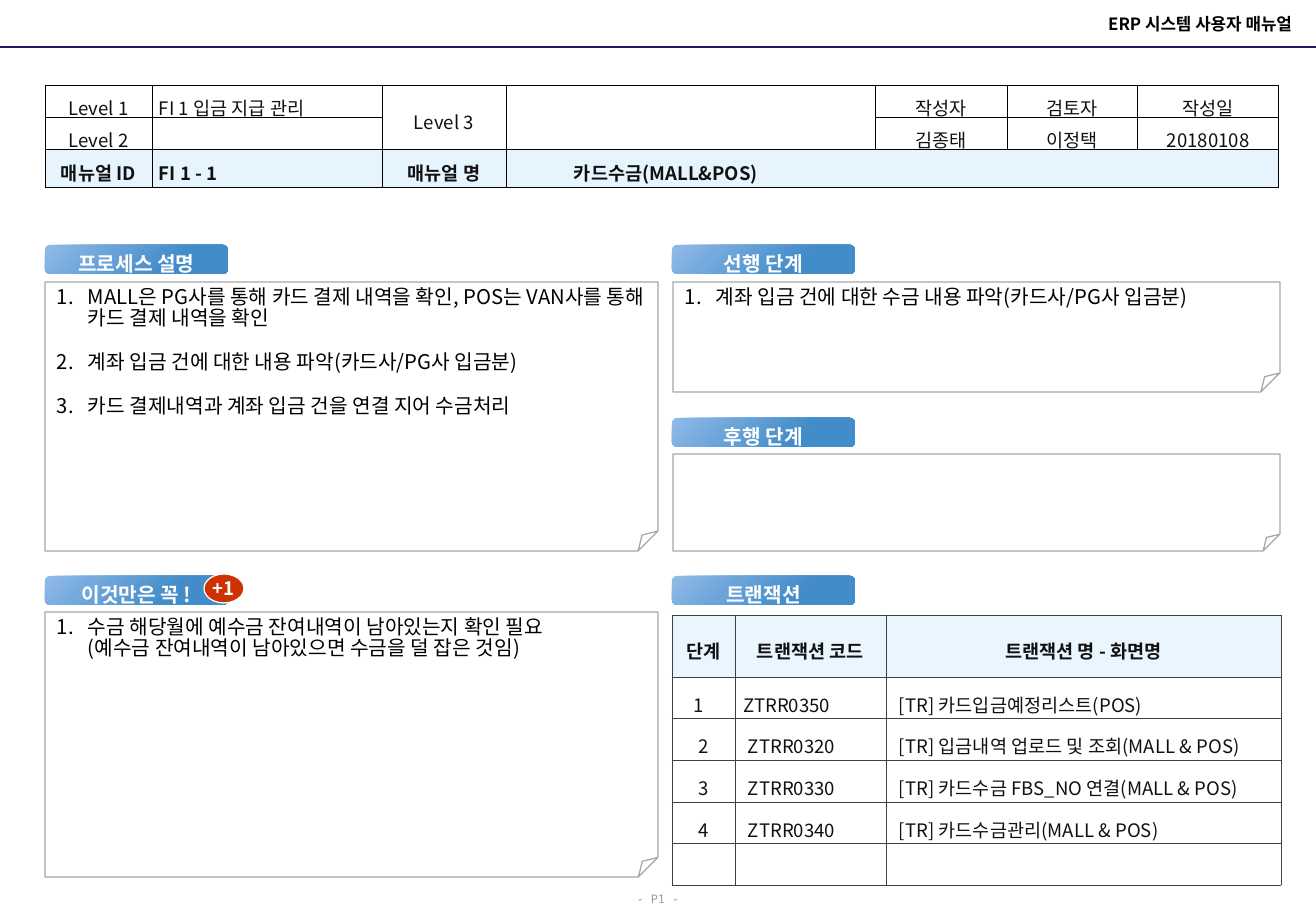
"""Build the ERP user manual page for card payment collection."""
from lxml import etree
from pptx import Presentation
from pptx.dml.color import RGBColor
from pptx.enum.shapes import MSO_CONNECTOR, MSO_SHAPE
from pptx.enum.text import MSO_ANCHOR, PP_ALIGN
from pptx.oxml.ns import qn
from pptx.util import Pt

PX = 7526
LEFT, CENTER, RIGHT = PP_ALIGN.LEFT, PP_ALIGN.CENTER, PP_ALIGN.RIGHT
MIDDLE, TOP = MSO_ANCHOR.MIDDLE, MSO_ANCHOR.TOP
ROUNDED, FOLDED, OVAL = MSO_SHAPE.ROUNDED_RECTANGLE, MSO_SHAPE.FOLDED_CORNER, MSO_SHAPE.OVAL
STRAIGHT = MSO_CONNECTOR.STRAIGHT
SANS, MONO = "Noto Sans CJK KR", "Noto Sans Mono"
COLORS = {
    "black": "000000", "ink": "111111", "white": "FFFFFF", "gray": "969696",
    "navy": "191966", "tab_light": "90BAE8", "tab_dark": "428CC9",
    "outline": "A6A6A6", "red": "CC3300", "grid": "404040",
    "id_row": "E6F4FE", "header_row": "E9F6FE",
}
RGB = {name: RGBColor.from_string(value) for name, value in COLORS.items()}


def add_run(p, text, size, color, bold=False, font=SANS):
    r = p.add_run()
    r.text = text
    r.font.size, r.font.bold, r.font.name = Pt(size), bold, font
    r.font.color.rgb = RGB[color]
    etree.SubElement(r.font._element, qn("a:ea"), typeface=font)


def style_cell(cell, text, align, bold, fill, border, margins):
    cell.vertical_anchor = MIDDLE
    cell.margin_left, cell.margin_top, cell.margin_right, cell.margin_bottom = [m * PX for m in margins]
    p = cell.text_frame.paragraphs[0]
    p.alignment, p.line_spacing = align, 1.3
    if text:
        add_run(p, text, 11, "ink", bold)
    else:
        etree.SubElement(p._p, qn("a:endParaRPr"), sz="1100")
    tcPr = cell._tc.get_or_add_tcPr()
    for side in ("a:lnL", "a:lnR", "a:lnT", "a:lnB"):
        ln = etree.SubElement(tcPr, qn(side), w="6350")
        solid = etree.SubElement(ln, qn("a:solidFill"))
        etree.SubElement(solid, qn("a:srgbClr"), val=COLORS[border])
    cell.fill.solid()
    cell.fill.fore_color.rgb = RGB[fill]


prs = Presentation()
prs.slide_width, prs.slide_height = 1316 * PX, 911 * PX
s = prs.slides.add_slide(prs.slide_layouts[5])

title = s.shapes.title
title.left, title.top, title.width, title.height = 734 * PX, 7 * PX, 570 * PX, 33 * PX
tf = title.text_frame
tf.vertical_anchor, tf.word_wrap = MIDDLE, True
p = tf.paragraphs[0]
p.alignment = RIGHT
add_run(p, "ERP 시스템 사용자 매뉴얼", 10, "black", True)

rule = s.shapes.add_connector(STRAIGHT, 0, 47 * PX, 1316 * PX, 47 * PX)
rule.line.color.rgb, rule.line.width = RGB["navy"], Pt(1.5)
etree.SubElement(rule._element.spPr, qn("a:effectLst"))

page = s.shapes.add_textbox(624 * PX, 881 * PX, 68 * PX, 30 * PX)
p = page.text_frame.paragraphs[0]
p.alignment, p.line_spacing = CENTER, 1.3
add_run(p, "- P1 -", 7, "gray", font=MONO)

MANUAL_ROWS = [
    ["Level 1", "FI 1 입금 지급 관리", "Level 3", "", "작성자", "검토자", "작성일"],
    ["Level 2", "", "", "", "김종태", "이정택", "20180108"],
    ["매뉴얼 ID", "FI 1 - 1", "매뉴얼 명", "카드수금(MALL&POS)", "", "", ""],
]
TRANSACTION_ROWS = [
    ["단계", "트랜잭션 코드", "트랜잭션 명 - 화면명"],
    ["1", "ZTRR0350", "[TR] 카드입금예정리스트(POS)"],
    ["2", "ZTRR0320", "[TR] 입금내역 업로드 및 조회(MALL & POS)"],
    ["3", "ZTRR0330", "[TR] 카드수금 FBS_NO 연결(MALL & POS)"],
    ["4", "ZTRR0340", "[TR] 카드수금관리(MALL & POS)"],
    ["", "", ""],
]
TABLES = [
    (45, 85, [107, 230, 124, 369, 132, 131, 141], [32, 32, 38], MANUAL_ROWS,
     2, "id_row", "black", (7, 1, 7, 1)),
    (672, 615, [63, 151, 395], [62, 40, 42, 42, 41, 42], TRANSACTION_ROWS,
     0, "header_row", "grid", (13, 6, 13, 6)),
]
tables = []
for x, y, cols, heights, rows, bold_row, tint, border, margins in TABLES:
    table = s.shapes.add_table(len(rows), len(cols), x * PX, y * PX,
                               sum(cols) * PX, sum(heights) * PX).table
    table.first_row = table.horz_banding = False
    for column, width in zip(table.columns, cols):
        column.width = width * PX
    for i, row in enumerate(rows):
        table.rows[i].height = heights[i] * PX
        for j, text in enumerate(row):
            bold = i == bold_row
            align = LEFT if j == 1 or text.startswith("[") else CENTER
            if bold and rows is TRANSACTION_ROWS:
                align = CENTER
            style_cell(table.cell(i, j), text, align, bold,
                       tint if bold else "white", border, margins)
    tables.append(table)

manual, transactions = tables
for col in (2, 3):
    manual.cell(0, col).merge(manual.cell(1, col))
manual.cell(2, 3).merge(manual.cell(2, 6))
manual.cell(2, 3).text_frame.paragraphs[0].alignment = LEFT
manual.cell(2, 3).margin_left = 68 * PX
transactions.cell(1, 0).margin_right = 23 * PX
transactions.cell(1, 1).margin_left = 8 * PX

TABS = [
    (45, 245, "프로세스 설명"), (672, 245, "선행 단계"), (672, 418, "후행 단계"),
    (45, 576, "이것만은 꼭 !"), (672, 576, "트랜잭션"),
]
for x, y, label in TABS:
    sp = s.shapes.add_shape(ROUNDED, x * PX, y * PX, 183 * PX, 29 * PX)
    sp.shadow.inherit = False
    sp.line.fill.background()
    sp.fill.gradient()
    sp.fill.gradient_angle = 315
    for stop, position, color in zip(sp.fill.gradient_stops, (0, 0.7), ("tab_light", "tab_dark")):
        stop.position, stop.color.rgb = position, RGB[color]
    tf = sp.text_frame
    tf.vertical_anchor, tf.word_wrap = MIDDLE, True
    tf.margin_left = tf.margin_top = tf.margin_right = 0
    tf.margin_bottom = 5 * PX
    p = tf.paragraphs[0]
    p.alignment, p.line_spacing = CENTER, 1.5
    add_run(p, label, 12, "white", True)

NOTES = [
    (45, 282, 613, 269, 7400, [
        "MALL은 PG사를 통해 카드 결제 내역을 확인, POS는 VAN사를 통해 카드 결제 내역을 확인",
        "계좌 입금 건에 대한 내용 파악(카드사/PG사 입금분)",
        "카드 결제내역과 계좌 입금 건을 연결 지어 수금처리"]),
    (673, 282, 607, 110, 17300, ["계좌 입금 건에 대한 수금 내용 파악(카드사/PG사 입금분)"]),
    (673, 454, 607, 97, 17300, []),
    (45, 612, 613, 265, 7400, [
        "수금 해당월에 예수금 잔여내역이 남아있는지 확인 필요\n"
        "(예수금 잔여내역이 남아있으면 수금을 덜 잡은 것임)"]),
]
for x, y, w, h, fold, items in NOTES:
    sp = s.shapes.add_shape(FOLDED, x * PX, y * PX, w * PX, h * PX)
    sp.shadow.inherit = False
    guides = sp._element.spPr.find(qn("a:prstGeom")).find(qn("a:avLst"))
    etree.SubElement(guides, qn("a:gd"), name="adj", fmla=f"val {fold}")
    sp.fill.background()
    sp.line.color.rgb, sp.line.width = RGB["outline"], Pt(0.75)
    tf = sp.text_frame
    tf.vertical_anchor, tf.word_wrap = TOP, True
    for i, item in enumerate(items):
        p = tf.add_paragraph() if i else tf.paragraphs[0]
        p.alignment, p.line_spacing = LEFT, 0.85
        if i:
            p.space_before = Pt(14)
        pPr = p._p.get_or_add_pPr()
        pPr.set("marL", str(31 * PX))
        pPr.set("indent", str(-31 * PX))
        etree.SubElement(pPr, qn("a:buFont"), typeface="+mj-lt")
        etree.SubElement(pPr, qn("a:buAutoNum"), type="arabicPeriod")
        for k, line in enumerate(item.split("\n")):
            if k:
                p.add_line_break()
            add_run(p, line, 12, "black")

badge = s.shapes.add_shape(OVAL, 204 * PX, 574 * PX, 40 * PX, 29 * PX)
badge.shadow.inherit = False
badge.fill.solid()
badge.fill.fore_color.rgb = RGB["red"]
badge.line.color.rgb, badge.line.width = RGB["white"], Pt(0.75)
tf = badge.text_frame
tf.vertical_anchor, tf.word_wrap = MIDDLE, False
p = tf.paragraphs[0]
p.alignment = CENTER
add_run(p, "+1", 11, "white", True)

prs.save("out.pptx")
